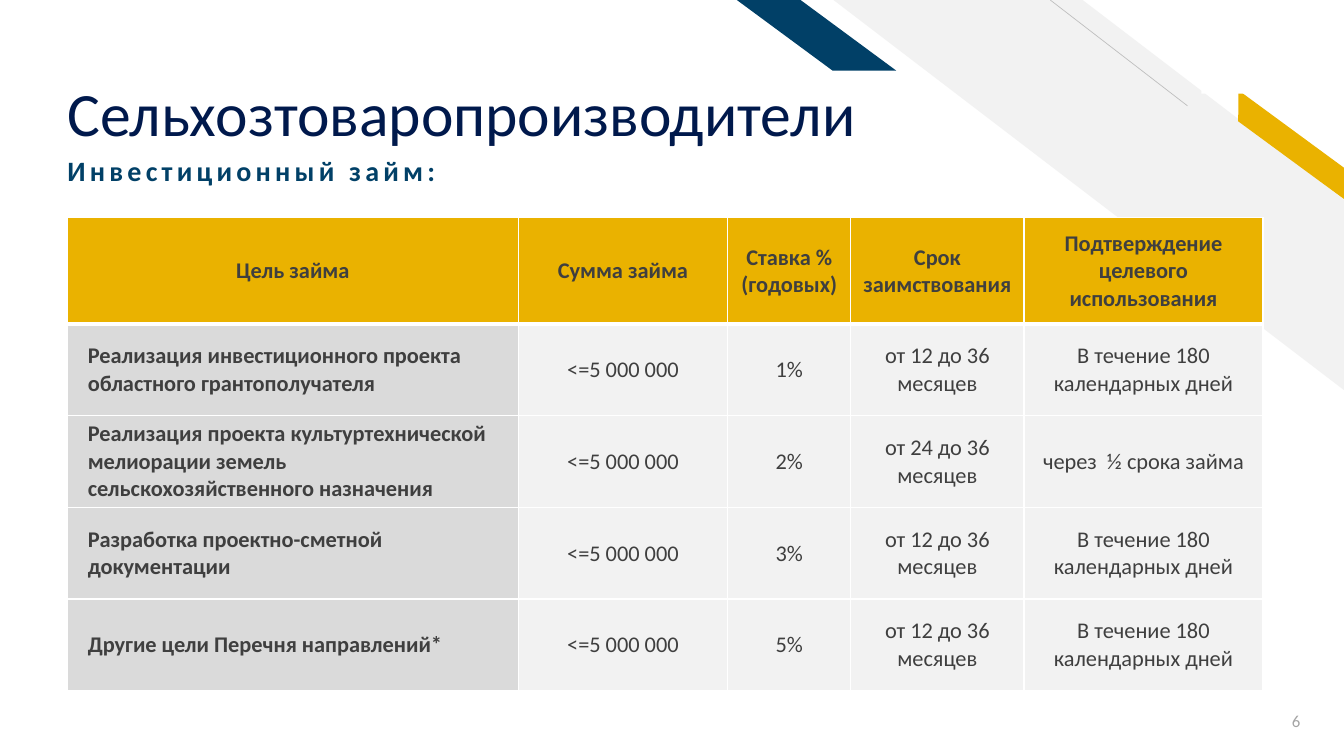
from lxml.etree import SubElement
from pptx import Presentation
from pptx.dml.color import RGBColor
from pptx.enum.shapes import MSO_CONNECTOR, MSO_SHAPE
from pptx.enum.text import MSO_ANCHOR, MSO_AUTO_SIZE, PP_ALIGN
from pptx.oxml import parse_xml
from pptx.oxml.ns import nsdecls, qn
from pptx.util import Pt

WHITE = RGBColor(0xFF, 0xFF, 0xFF)
NAVY = RGBColor(0x00, 0x19, 0x4C)
BLUE = RGBColor(0x01, 0x40, 0x67)
GOLD = RGBColor(0xEA, 0xB2, 0x00)
LIGHT_GRAY = RGBColor(0xF2, 0xF2, 0xF2)
MID_GRAY = RGBColor(0xDA, 0xDA, 0xDA)
LINE_GRAY = RGBColor(0xBF, 0xBF, 0xBF)
NUMBER_GRAY = RGBColor(0xA5, 0xA5, 0xA5)
TEXT_GRAY = RGBColor(0x3F, 0x3F, 0x3F)


def set_font(paragraph, size, color, bold=False):
    paragraph.font.name = "Calibri"
    paragraph.font.size = Pt(size)
    paragraph.font.bold = bold
    paragraph.font.color.rgb = color


def add_borders(cell, top, bottom):
    """Give the cell white borders; top and bottom are widths in points."""
    widths = {"lnL": 1, "lnR": 1, "lnT": top, "lnB": bottom}
    properties = cell._tc.get_or_add_tcPr()
    for position, (tag, width) in enumerate(widths.items()):
        border = parse_xml(
            f'<a:{tag} {nsdecls("a")} w="{Pt(width)}"><a:solidFill>'
            f'<a:srgbClr val="{WHITE}"/></a:solidFill></a:{tag}>')
        properties.insert(position, border)


presentation = Presentation()
presentation.slide_width = Pt(960)
presentation.slide_height = Pt(540)
slide = presentation.slides.add_slide(presentation.slide_layouts[1])

# Corner decoration: preset, left, top, width, height, adjustment, rotation, fill
decorations = [
    (MSO_SHAPE.DIAGONAL_STRIPE, 595.4, 0, 364.6, 278.6, 0.512, 0, LIGHT_GRAY),
    (MSO_SHAPE.PARALLELOGRAM, 869, 94.3, 106.6, 18, 0.72, 36.3, GOLD),
    (MSO_SHAPE.PARALLELOGRAM, 526.3, 0, 113.8, 50.4, 1.356, 0, BLUE),
    (MSO_SHAPE.RECTANGLE, 858.2, 15.8, 101.8, 51.1, None, 0, WHITE),
]
for preset, left, top, width, height, adjustment, rotation, color in decorations:
    shape = slide.shapes.add_shape(preset, Pt(left), Pt(top), Pt(width), Pt(height))
    if adjustment is not None:
        shape.adjustments[0] = adjustment
    shape.rotation = rotation
    shape.shadow.inherit = False
    shape.fill.solid()
    shape.fill.fore_color.rgb = color
    shape.line.fill.background()
    shape._element.spPr.find(qn("a:xfrm")).set("flipH", "1")

thin_line = slide.shapes.add_connector(
    MSO_CONNECTOR.STRAIGHT, Pt(848.2), Pt(75.6), Pt(750.2), Pt(0))
thin_line.line.color.rgb = LINE_GRAY
thin_line.line.width = Pt(0.5)
SubElement(thin_line._element.spPr, qn("a:effectLst"))

# Title and subtitle
title = slide.shapes.title
title.left, title.top, title.width, title.height = Pt(41), Pt(16.6), Pt(656), Pt(90.7)
title.text_frame.text = "Сельхозтоваропроизводители"
title.text_frame.auto_size = MSO_AUTO_SIZE.NONE
title.text_frame.vertical_anchor = MSO_ANCHOR.BOTTOM
title.text_frame.margin_bottom = 0
paragraph = title.text_frame.paragraphs[0]
paragraph.alignment = PP_ALIGN.LEFT
paragraph.line_spacing = 0.9
set_font(paragraph, 44, NAVY)

subtitle = slide.placeholders[1]
subtitle.left, subtitle.top, subtitle.width, subtitle.height = Pt(41), Pt(108.7), Pt(580), Pt(48.2)
subtitle.text_frame.text = "Инвестиционный займ:"
subtitle.text_frame.auto_size = MSO_AUTO_SIZE.NONE
paragraph = subtitle.text_frame.paragraphs[0]
paragraph.line_spacing = 0.9
paragraph.space_before = Pt(10)
set_font(paragraph, 20, BLUE, bold=True)
paragraph.runs[0].font._element.set("spc", "300")
paragraph_properties = paragraph._p.get_or_add_pPr()
paragraph_properties.set("marL", "0")
paragraph_properties.set("indent", "0")
bullet_none = parse_xml(f'<a:buNone {nsdecls("a")}/>')
paragraph_properties.find(qn("a:spcBef")).addnext(bullet_none)

# Loan table
loan_rows = [
    ("Цель займа", "Сумма займа", "Ставка % (годовых)", "Срок заимствования",
     "Подтверждение целевого использования"),
    ("Реализация инвестиционного проекта областного грантополучателя",
     "<=5 000 000", "1%", "от 12 до 36 месяцев", "В течение 180 календарных дней"),
    ("Реализация проекта культуртехнической мелиорации земель "
     "сельскохозяйственного назначения",
     "<=5 000 000", "2%", "от 24 до 36 месяцев", "через  ½ срока займа"),
    ("Разработка проектно-сметной документации",
     "<=5 000 000", "3%", "от 12 до 36 месяцев", "В течение 180 календарных дней"),
    ("Другие цели Перечня направлений*",
     "<=5 000 000", "5%", "от 12 до 36 месяцев", "В течение 180 календарных дней"),
]
column_widths = [321.8, 149.8, 87.8, 123.8, 170.7]
row_heights = [76] + [65.2] * 4
table = slide.shapes.add_table(
    len(loan_rows), len(column_widths), Pt(48.3), Pt(155.6),
    Pt(sum(column_widths)), Pt(sum(row_heights))).table
for column, width in zip(table.columns, column_widths):
    column.width = Pt(width)
for row, height in zip(table.rows, row_heights):
    row.height = Pt(height)

for row_index, loan_row in enumerate(loan_rows):
    for column_index, text in enumerate(loan_row):
        is_header = row_index == 0
        is_purpose = column_index == 0 and not is_header
        cell = table.cell(row_index, column_index)
        cell.text = text
        cell.vertical_anchor = MSO_ANCHOR.MIDDLE
        cell.margin_left = Pt(14.4 if is_purpose else 7.2)
        cell.fill.solid()
        cell.fill.fore_color.rgb = GOLD if is_header else MID_GRAY if is_purpose else LIGHT_GRAY
        add_borders(cell, top=3 if row_index == 1 else 1, bottom=3 if is_header else 1)
        paragraph = cell.text_frame.paragraphs[0]
        paragraph.alignment = PP_ALIGN.LEFT if is_purpose else PP_ALIGN.CENTER
        set_font(paragraph, 16, TEXT_GRAY, bold=is_header or is_purpose)

# Slide number
slide_number = slide.shapes.add_textbox(Pt(877.7), Pt(500.4), Pt(58.3), Pt(28.8))
slide_number.text_frame.word_wrap = True
slide_number.text_frame.vertical_anchor = MSO_ANCHOR.MIDDLE
slide_number.text_frame.text = "6"
paragraph = slide_number.text_frame.paragraphs[0]
paragraph.alignment = PP_ALIGN.RIGHT
set_font(paragraph, 12, NUMBER_GRAY)

presentation.save("out.pptx")
